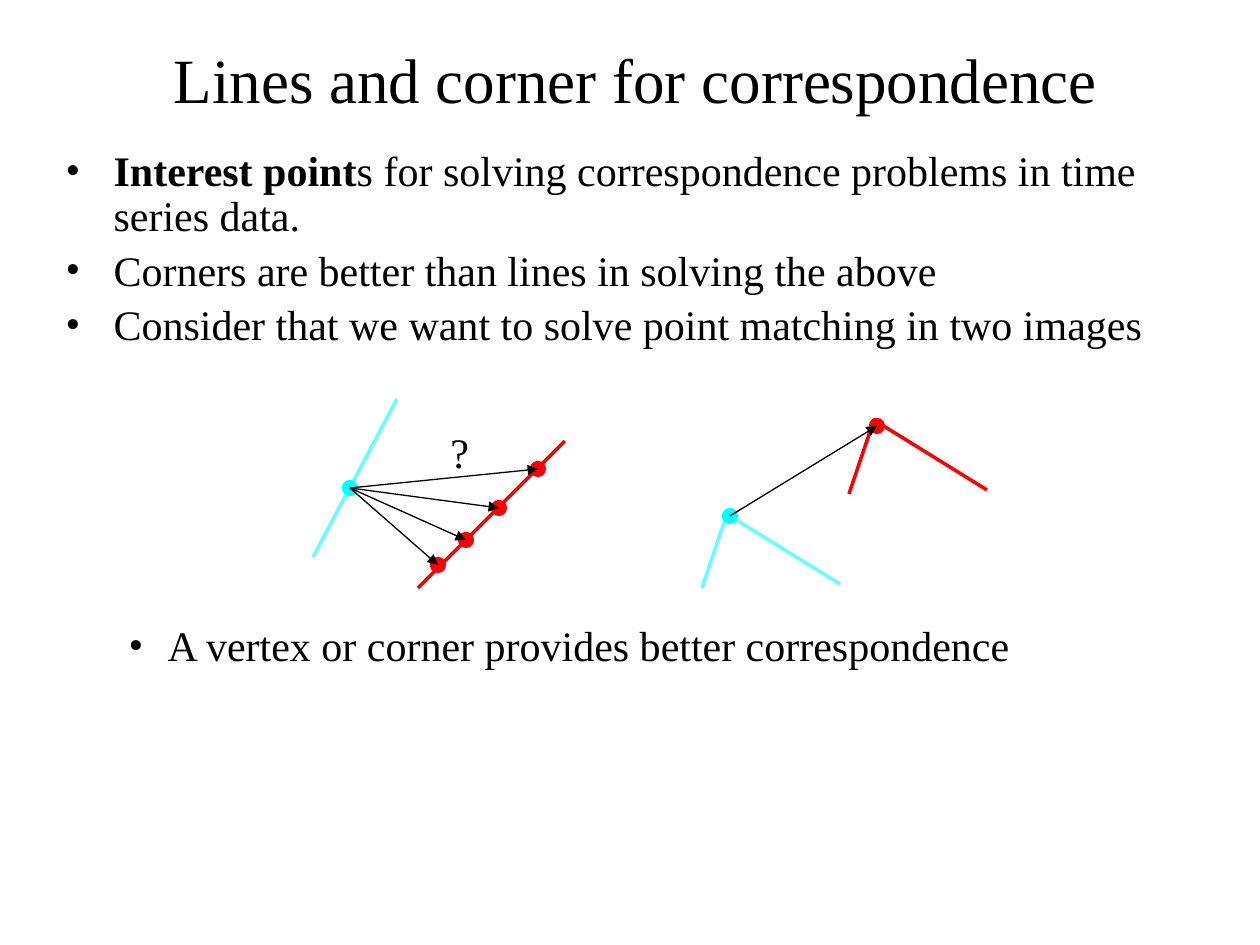
from dataclasses import dataclass

from lxml.etree import SubElement
from pptx import Presentation
from pptx.dml.color import RGBColor
from pptx.enum.shapes import MSO_CONNECTOR, MSO_SHAPE
from pptx.enum.text import MSO_ANCHOR, MSO_AUTO_SIZE, PP_ALIGN
from pptx.oxml.ns import qn
from pptx.util import Pt

EMU_PER_PX = 914400 / 126


@dataclass(frozen=True)
class Theme:
    """Colours, type sizes and line weights of the slide."""
    font: str = "Times New Roman"
    ink: str = "000000"
    first_line: str = "66FFFF"
    first_point: str = "00FFFF"
    second: str = "FF0000"
    title_size: int = 36
    body_size: int = 24
    edge_weight: float = 2
    thin_weight: float = 0.75


THEME = Theme()


def px(length):
    """Turn pixels into EMU."""
    return round(length * EMU_PER_PX)


def place(shape, left, top, width, height):
    """Move and size a shape, in pixels."""
    shape.left, shape.top = px(left), px(top)
    shape.width, shape.height = px(width), px(height)


def add_run(paragraph, text, size, bold=False):
    """Add one run in the theme's font."""
    run = paragraph.add_run()
    run.text = text
    run.font.name = THEME.font
    run.font.size = Pt(size)
    run.font.bold = bold
    run.font.color.rgb = RGBColor.from_string(THEME.ink)


def set_line(shape, color, weight):
    """Give a shape or connector a solid line."""
    shape.line.color.rgb = RGBColor.from_string(color)
    shape.line.width = Pt(weight)


def fill_title(slide, text):
    """Write the slide title."""
    title = slide.shapes.title
    place(title, 81, 24, 1109, 108)
    frame = title.text_frame
    frame.auto_size = MSO_AUTO_SIZE.NONE
    frame.vertical_anchor = MSO_ANCHOR.MIDDLE
    paragraph = frame.paragraphs[0]
    paragraph.alignment = PP_ALIGN.CENTER
    add_run(paragraph, text, THEME.title_size)


def format_bullet(paragraph, level, space_before):
    """Set level, spacing, hanging indent and bullet of a paragraph."""
    margin, hanging = ((48, 48), (102, 39))[level]
    paragraph.level = level
    paragraph.line_spacing = 0.9
    paragraph.space_before = Pt(space_before)
    properties = paragraph._p.get_or_add_pPr()
    properties.set("marL", str(px(margin)))
    properties.set("indent", str(px(-hanging)))
    SubElement(properties, qn("a:buFont")).set("typeface", THEME.font)
    SubElement(properties, qn("a:buChar")).set("char", "•")


def fill_body(slide, items):
    """Write the bullet list, each item as level, space before and runs."""
    body = slide.placeholders[1]
    place(body, 53, 144, 1134, 726)
    frame = body.text_frame
    frame.auto_size = MSO_AUTO_SIZE.NONE
    for index, (level, space_before, runs) in enumerate(items):
        paragraph = frame.add_paragraph() if index else frame.paragraphs[0]
        format_bullet(paragraph, level, space_before)
        for text, bold in runs:
            add_run(paragraph, text, THEME.body_size, bold)


def add_segment(slide, start, end, color, weight, arrow=False):
    """Draw a straight line, with an arrowhead at its end if wanted."""
    connector = slide.shapes.add_connector(
        MSO_CONNECTOR.STRAIGHT, *map(px, start + end))
    set_line(connector, color, weight)
    if arrow:
        SubElement(connector.line._get_or_add_ln(), qn("a:tailEnd")).set("type", "triangle")
    SubElement(connector._element.spPr, qn("a:effectLst"))


def add_point(slide, center, color):
    """Draw a filled dot around its centre."""
    diameter = 15
    left, top = (px(value - diameter / 2) for value in center)
    dot = slide.shapes.add_shape(
        MSO_SHAPE.OVAL, left, top, px(diameter), px(diameter))
    dot.shadow.inherit = False
    dot.fill.solid()
    dot.fill.fore_color.rgb = RGBColor.from_string(color)
    set_line(dot, color, THEME.thin_weight)


def add_corner(slide, vertex, color):
    """Draw two edges that meet at a vertex."""
    x, y = vertex
    builder = slide.shapes.build_freeform(x - 25, y + 74, scale=EMU_PER_PX)
    builder.add_line_segments([vertex, (x + 113, y + 70)], close=False)
    corner = builder.convert_to_shape()
    corner.shadow.inherit = False
    corner.fill.background()
    set_line(corner, color, THEME.edge_weight)


def add_label(slide, text, left, top, width, height):
    """Add a text box with one line."""
    box = slide.shapes.add_textbox(*map(px, (left, top, width, height)))
    box.text_frame.word_wrap = True
    add_run(box.text_frame.paragraphs[0], text, THEME.body_size)


def add_matches(slide, source, targets):
    """Draw the points and an arrow from the source to each target."""
    add_point(slide, source, THEME.first_point)
    for target in targets:
        add_point(slide, target, THEME.second)
    for target in targets:
        add_segment(slide, source, target, THEME.ink, THEME.thin_weight, arrow=True)


def draw_line_case(slide):
    """Show that a point on a line has many possible matches."""
    add_segment(slide, (397, 399), (313, 557), THEME.first_line, THEME.edge_weight)
    add_segment(slide, (565, 441), (418, 588), THEME.second, THEME.edge_weight)
    add_matches(slide, (350, 488), [(438, 565), (466, 540), (499, 508), (538, 469)])
    add_label(slide, "?", 438, 420, 84, 63)


def draw_corner_case(slide):
    """Show that a corner has a single match."""
    add_corner(slide, (727, 514), THEME.first_line)
    add_corner(slide, (874, 420), THEME.second)
    add_matches(slide, (730, 516), [(877, 426)])


def main():
    """Build and save the slide."""
    presentation = Presentation()
    presentation.slide_width, presentation.slide_height = px(1260), px(945)
    slide = presentation.slides.add_slide(presentation.slide_layouts[1])
    fill_title(slide, "Lines and corner for correspondence")
    fill_body(slide, [
        (0, 5, [("Interest point", True),
                ("s for solving correspondence problems in time series data.", False)]),
        (0, 5, [("Corners are better than lines in solving the above", False)]),
        (0, 5, [("Consider that we want to solve point matching in two images", False)]),
        (1, 158, [("A vertex or corner provides better correspondence", False)]),
    ])
    draw_line_case(slide)
    draw_corner_case(slide)
    presentation.save("out.pptx")


if __name__ == "__main__":
    main()
